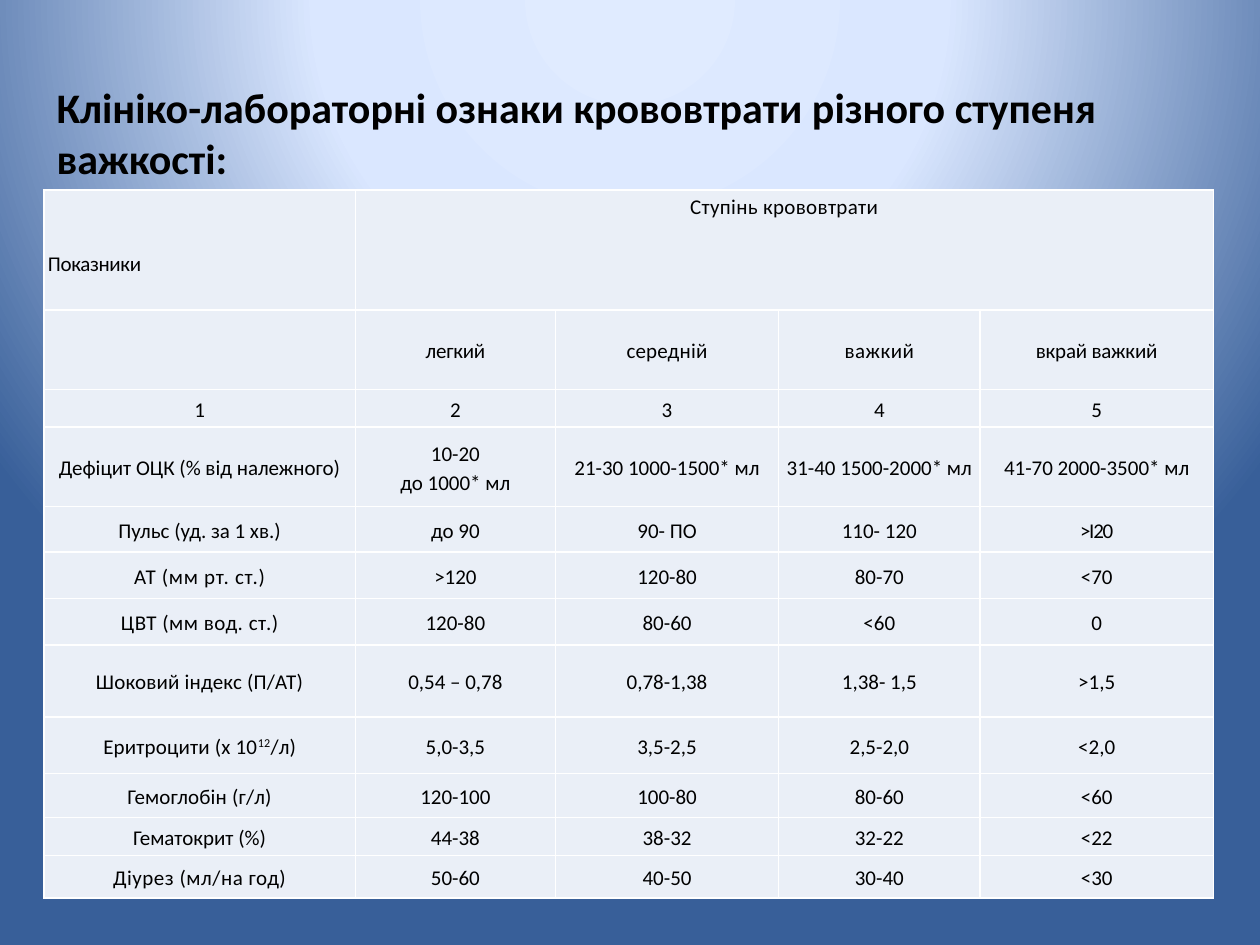
from lxml import etree
from pptx import Presentation
from pptx.dml.color import RGBColor
from pptx.enum import text
from pptx.oxml import ns
from pptx.util import Inches, Pt

COLORS = {
    "text": "000000",
    "cell": "EAEFF7",
    "border": "FFFFFF",
    "glow": "E0EBFF",
    "sky": "DAE7FF",
    "edge": "385F99",
}
FONT = "Calibri"
COLUMN_WIDTHS = [2.47, 1.59, 1.77, 1.6, 1.85]
ROW_HEIGHTS = [0.95, 0.63, 0.3, 0.63, 0.36, 0.37, 0.37, 0.57, 0.45, 0.35, 0.3, 0.34]
# "^" switches superscript on and off; a line break starts a new paragraph.
ROWS = [
    ["Показники", "Ступінь крововтрати"],
    ["", "легкий", "середній", "важкий", "вкрай важкий"],
    ["1", "2", "3", "4", "5"],
    ["Дефіцит ОЦК (% від належного)", "10-20\nдо 1000* мл", "21-30 1000-1500* мл",
     "31-40 1500-2000* мл", "41-70 2000-3500* мл"],
    ["Пульс (уд. за 1 хв.)", "до 90", "90- ПО", "110- 120", ">І20"],
    ["АТ (мм рт. ст.)", ">120", "120-80", "80-70", "<70"],
    ["ЦВТ (мм вод. ст.)", "120-80", "80-60", "<60", "0"],
    ["Шоковий індекс (П/АТ)", "0,54 – 0,78", "0,78-1,38", "1,38- 1,5", ">1,5"],
    ["Еритроцити (х 10^12^/л)", "5,0-3,5", "3,5-2,5", "2,5-2,0", "<2,0"],
    ["Гемоглобін (г/л)", "120-100", "100-80", "80-60", "<60"],
    ["Гематокрит (%)", "44-38", "38-32", "32-22", "<22"],
    ["Діурез (мл/на год)", "50-60", "40-50", "30-40", "<30"],
]
# Letter spacing in points by (row, column).
TRACKING = {
    (0, 0): -0.2, (0, 1): 0.2,
    (1, 1): -0.1, (1, 2): 0.1, (1, 3): 0.3, (1, 4): -0.1,
    (4, 4): -0.7, (5, 0): 0.4, (6, 0): 0.3, (7, 0): 0.1,
    (8, 0): 0.1, (9, 0): 0.1, (11, 0): 0.3,
}


def rgb(name):
    return RGBColor.from_string(COLORS[name])


def add_color(parent, name):
    return etree.SubElement(parent, ns.qn("a:srgbClr"), val=COLORS[name])


def paint_background(slide):
    """Radial glow centred above the slide."""
    slide.background.fill.gradient()
    gradient = slide.element.find(".//" + ns.qn("a:gradFill"))
    for child in list(gradient):
        gradient.remove(child)
    stops = etree.SubElement(gradient, ns.qn("a:gsLst"))
    for percent, name in [(0, "glow"), (40, "sky"), (100, "edge")]:
        add_color(etree.SubElement(stops, ns.qn("a:gs"), pos=str(percent * 1000)), name)
    circle = etree.SubElement(gradient, ns.qn("a:path"))
    circle.set("path", "circle")
    etree.SubElement(circle, ns.qn("a:fillToRect"),
                     l="50000", t="-80000", r="50000", b="180000")


def add_title(slide, left, top, width, height):
    title = slide.shapes.add_textbox(Inches(left), Inches(top), Inches(width), Inches(height))
    title.text_frame.word_wrap = True
    paragraph = title.text_frame.paragraphs[0]
    paragraph.text = "Клініко-лабораторні ознаки крововтрати різного ступеня важкості:"
    style_font(paragraph.font, 24)
    paragraph.font.bold = True


def style_font(font, size):
    font.name = FONT
    font.size = Pt(size)
    font.color.rgb = rgb("text")


def add_borders(cell):
    properties = cell._tc.get_or_add_tcPr()
    for index, side in enumerate(["lnL", "lnR", "lnT", "lnB"]):
        line = etree.Element(ns.qn("a:" + side), w=str(Pt(1)))
        add_color(etree.SubElement(line, ns.qn("a:solidFill")), "border")
        properties.insert(index, line)


def style_cell(cell):
    cell.fill.solid()
    cell.fill.fore_color.rgb = rgb("cell")
    cell.margin_left = cell.margin_right = Inches(0.03)
    cell.margin_top = cell.margin_bottom = 0
    cell.vertical_anchor = text.MSO_ANCHOR.MIDDLE
    add_borders(cell)


def write_cell(cell, content, tracking):
    for number, line in enumerate(content.split("\n")):
        frame = cell.text_frame
        paragraph = frame.add_paragraph() if number else frame.paragraphs[0]
        paragraph.alignment = text.PP_ALIGN.CENTER
        paragraph.line_spacing = 1.15
        style_font(paragraph.font, 12)
        for part, piece in enumerate(line.split("^")):
            run = paragraph.add_run()
            run.text = piece
            properties = run._r.get_or_add_rPr()
            if tracking:
                properties.set("spc", str(round(tracking * 100)))
            if part % 2:
                properties.set("baseline", "30000")


def add_blood_loss_table(slide, left, top, width, height):
    table = slide.shapes.add_table(len(ROW_HEIGHTS), len(COLUMN_WIDTHS), Inches(left),
                                   Inches(top), Inches(width), Inches(height)).table
    table.first_row = table.horz_banding = False
    for column, column_width in zip(table.columns, COLUMN_WIDTHS):
        column.width = Inches(column_width)
    for row, row_height in zip(table.rows, ROW_HEIGHTS):
        row.height = Inches(row_height)
    for cell in table.iter_cells():
        style_cell(cell)
    for r, row in enumerate(ROWS):
        for c, content in enumerate(row):
            if content:
                write_cell(table.cell(r, c), content, TRACKING.get((r, c), 0))

    indicators, degree = table.cell(0, 0), table.cell(0, 1)
    degree.merge(table.cell(0, 4))
    indicators.vertical_anchor = degree.vertical_anchor = text.MSO_ANCHOR.TOP
    indicators.margin_top = Inches(0.46)
    indicators.text_frame.paragraphs[0].alignment = text.PP_ALIGN.JUSTIFY


def main():
    deck = Presentation()
    deck.slide_width, deck.slide_height = Inches(10), Inches(7.5)
    slide = deck.slides.add_slide(deck.slide_layouts[6])
    paint_background(slide)
    left, width, table_top, title_height = 0.35, 9.29, 1.51, 0.91
    add_blood_loss_table(slide, left, table_top, width, sum(ROW_HEIGHTS))
    add_title(slide, left, table_top - title_height, width, title_height)
    deck.save("out.pptx")


if __name__ == "__main__":
    main()
